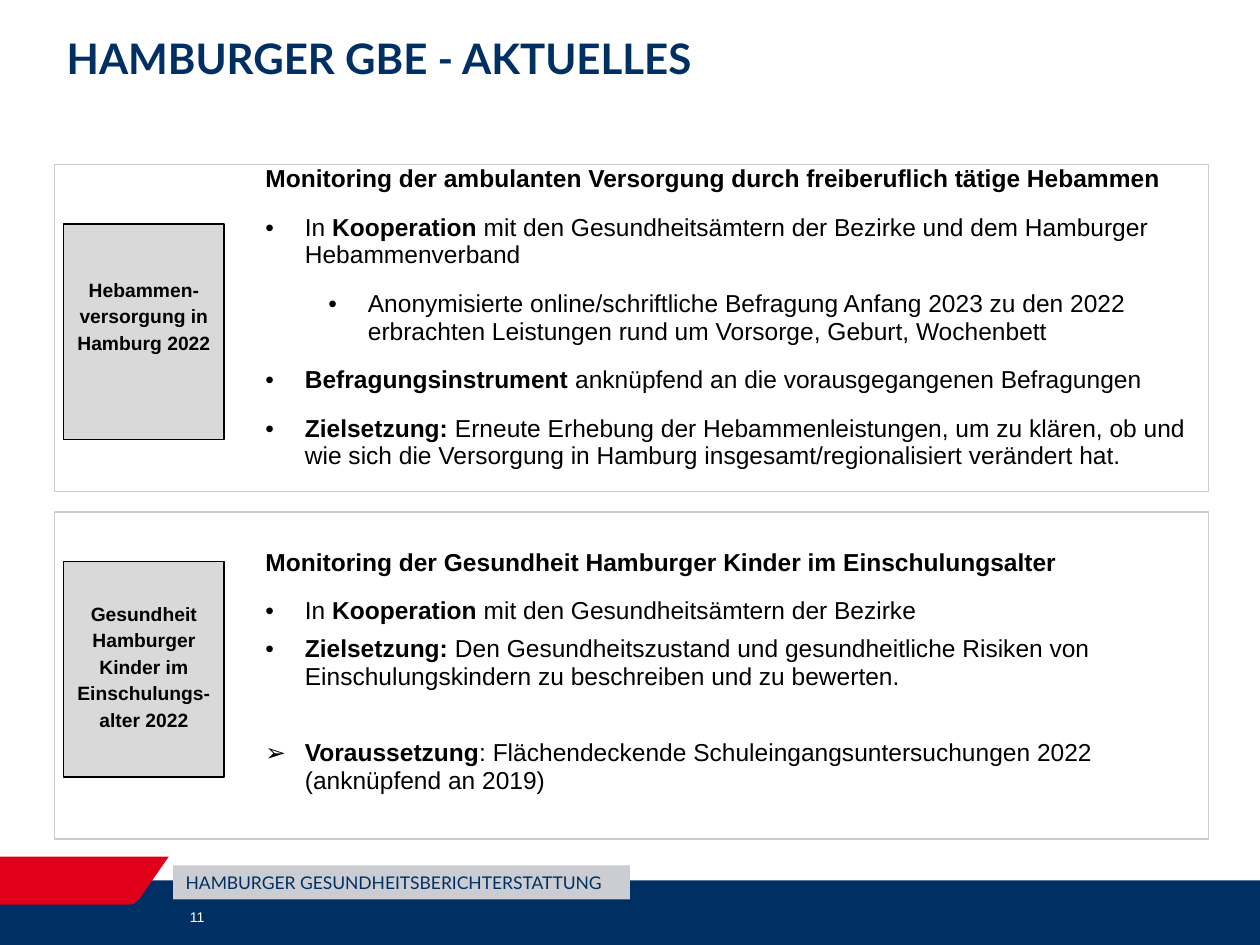
from lxml import etree
from pptx import Presentation
from pptx.dml.color import RGBColor
from pptx.enum.shapes import MSO_SHAPE
from pptx.enum.text import MSO_ANCHOR, PP_ALIGN
from pptx.oxml.ns import qn
from pptx.util import Pt

RECT = MSO_SHAPE.RECTANGLE
TOP, MID = MSO_ANCHOR.TOP, MSO_ANCHOR.MIDDLE
LEFT, MITTE = PP_ALIGN.LEFT, PP_ALIGN.CENTER
NAVY = RGBColor(0x00, 0x30, 0x63)
RED = RGBColor(0xE1, 0x00, 0x19)
BLACK = RGBColor(0, 0, 0)
WHITE = RGBColor(255, 255, 255)
PALE = RGBColor(0xCB, 0xCD, 0xD3)
GREY = RGBColor(0xD9, 0xD9, 0xD9)
RULE = RGBColor(0xCC, 0xCC, 0xCC)
PLAIN = "{2D5ABB26-0587-4C30-8999-92F81FD0307C}"
HANG = 22.5

MIDWIFE = [
    ("*Monitoring der ambulanten Versorgung durch freiberuflich tätige Hebammen*",
     dict(after=6)),
    ("In *Kooperation* mit den Gesundheitsämtern der Bezirke und dem Hamburger "
     "Hebammenverband", dict(mark="•", before=6, after=6)),
    ("Anonymisierte online/schriftliche Befragung Anfang 2023 zu den 2022 "
     "erbrachten Leistungen rund um Vorsorge, Geburt, Wochenbett",
     dict(mark="•", level=1, before=6, after=6)),
    ("*Befragungsinstrument* anknüpfend an die vorausgegangenen Befragungen",
     dict(mark="•", before=6, after=6)),
    ("*Zielsetzung:* Erneute Erhebung der Hebammenleistungen, um zu klären, ob und "
     "wie sich die Versorgung in Hamburg insgesamt/regionalisiert verändert hat.",
     dict(mark="•", before=6)),
]
SCHOOL = [
    ("*Monitoring der Gesundheit Hamburger Kinder im Einschulungsalter*",
     dict(after=6)),
    ("In *Kooperation* mit den Gesundheitsämtern der Bezirke",
     dict(mark="•", before=6)),
    ("*Zielsetzung:* Den Gesundheitszustand und gesundheitliche Risiken von "
     "Einschulungskindern zu beschreiben und zu bewerten.",
     dict(mark="•", before=6)),
    ("*Voraussetzung*: Flächendeckende Schuleingangsuntersuchungen 2022 "
     "(anknüpfend an 2019)", dict(mark="➢", before=28)),
]


def write(para, text, size=14, color=BLACK, face="Arial", align=LEFT,
          before=0, after=0, lead=1.0, mark=None, level=0):
    para.alignment = align
    para.level = level
    para.line_spacing = lead
    para.space_before = Pt(before)
    para.space_after = Pt(after)
    if mark:
        props = para._p.get_or_add_pPr()
        props.set("marL", str(Pt(HANG + 36 * level)))
        props.set("indent", str(-Pt(HANG)))
        etree.SubElement(props, qn("a:buFont")).set("typeface", "Arial")
        etree.SubElement(props, qn("a:buChar")).set("char", mark)
    for spot, part in enumerate(text.split("*")):
        if part:
            run = para.add_run()
            run.text = part
            font = run.font
            font.name, font.size, font.bold = face, Pt(size), spot % 2 == 1
            font.color.rgb = color


class Page:
    def __init__(self, deck):
        self.slide = deck.slides.add_slide(deck.slide_layouts[6])
        self.shapes = self.slide.shapes

    def paint(self, shape, fill, line):
        shape.shadow.inherit = False
        if fill is None:
            shape.fill.background()
        else:
            shape.fill.solid()
            shape.fill.fore_color.rgb = fill
        if line is None:
            shape.line.fill.background()
        else:
            shape.line.color.rgb = line
            shape.line.width = Pt(0.75)
        return shape

    def box(self, x, y, w, h, fill=None, line=None):
        shape = self.shapes.add_shape(RECT, Pt(x), Pt(y), Pt(w), Pt(h))
        return self.paint(shape, fill, line)

    def shape(self, dots, fill):
        dots = [(Pt(x), Pt(y)) for x, y in dots]
        form = self.shapes.build_freeform(*dots[0])
        form.add_line_segments(dots[1:], close=True)
        self.paint(form.convert_to_shape(), fill, None)

    def fill(self, shape, text, anchor=TOP, pad=(7.2, 3.6, 7.2, 3.6), **style):
        frame = shape.text_frame
        frame.word_wrap = True
        frame.vertical_anchor = anchor
        (frame.margin_left, frame.margin_top,
         frame.margin_right, frame.margin_bottom) = map(Pt, pad)
        write(frame.paragraphs[0], text, **style)

    def label(self, x, y, w, h, text, **style):
        area = self.shapes.add_textbox(Pt(x), Pt(y), Pt(w), Pt(h))
        self.fill(area, text, **style)

    def table(self, x, y, cols, rows, texts):
        table = self.shapes.add_table(len(rows), len(cols), Pt(x), Pt(y),
                                      Pt(sum(cols)), Pt(sum(rows))).table
        table.first_row = table.horz_banding = False
        table._tbl.tblPr.find(qn("a:tableStyleId")).text = PLAIN
        for col, width in zip(table.columns, cols):
            col.width = Pt(width)
        for row, height in zip(table.rows, rows):
            row.height = Pt(height)
        for cell in table.iter_cells():
            cell.fill.background()
        for cell in table.rows[0].cells:
            cell.margin_top = cell.margin_bottom = 0
        for index, lines in enumerate(texts, 1):
            frame = table.cell(index, 1).text_frame
            for spot, (text, style) in enumerate(lines):
                para = frame.add_paragraph() if spot else frame.paragraphs[0]
                write(para, text, **style)


def main():
    deck = Presentation()
    deck.slide_width, deck.slide_height = Pt(720), Pt(540)
    page = Page(deck)
    page.box(0, 503, 720, 37, NAVY)
    page.shape([(0, 489.5), (96.5, 489.5), (80.5, 512.5), (79, 514.5),
                (76.5, 516.5), (73.5, 517), (0, 517)], RED)
    for y in (292.5, 94):
        page.box(31, y, 659.5, 187, line=RULE)
    page.table(36.5, 65, (108, 561.5), (26, 219, 160), (MIDWIFE, SCHOOL))
    page.label(31, 15, 669, 68, "*HAMBURGER GBE - AKTUELLES*",
               size=24, color=NAVY, face="Lato")
    strip = page.box(99, 494.5, 261, 19.5, PALE)
    page.fill(strip, "HAMBURGER GESUNDHEITSBERICHTERSTATTUNG", anchor=MID,
              size=10, color=NAVY, face="Lato")
    page.label(108.5, 519, 52.5, 9.5, "11", anchor=MID, pad=(0, 0, 0, 0),
               size=8, color=WHITE)
    for y, top, text in (
            (128, 29, "*Hebammen-versorgung in Hamburg 2022*"),
            (321, 21, "*Gesundheit Hamburger Kinder im Einschulungs-alter 2022*")):
        card = page.box(36.5, y, 91.5, 123, GREY, BLACK)
        page.fill(card, text, pad=(7.2, top, 7.2, 3.6),
                  size=11, align=MITTE, lead=1.15)
    deck.save("out.pptx")


if __name__ == "__main__":
    main()
